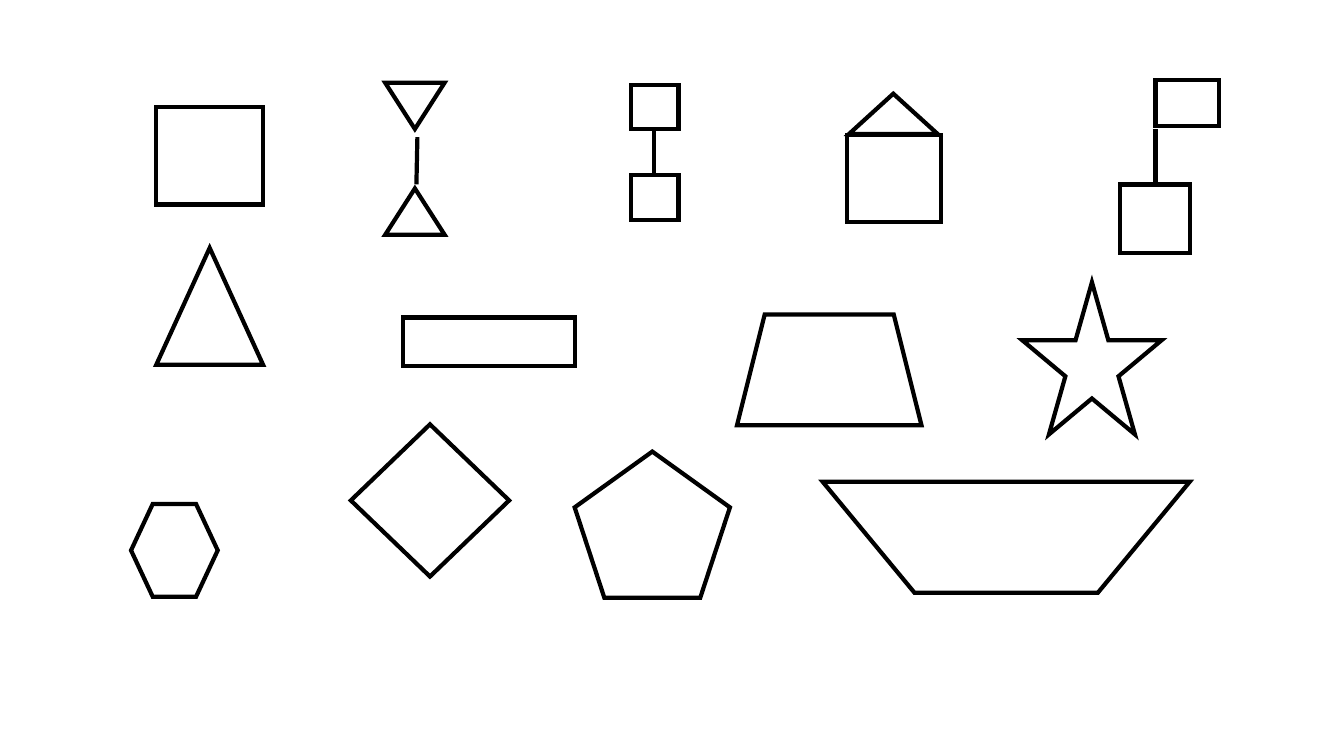
"""Build a slide of outlined geometric shapes and simple figures made from them."""
from dataclasses import dataclass

from lxml import etree
from pptx import Presentation
from pptx.dml.color import RGBColor
from pptx.enum.shapes import MSO_CONNECTOR, MSO_SHAPE as SHAPE
from pptx.oxml.ns import qn
from pptx.util import Emu, Pt

PX = 9144


@dataclass(frozen=True)
class Theme:
    paper: RGBColor = RGBColor(255, 255, 255)
    ink: RGBColor = RGBColor(0, 0, 0)
    stroke: Pt = Pt(3)


theme = Theme()


def px(*lengths):
    return [Emu(length * PX) for length in lengths]


def outline(line):
    line.color.rgb = theme.ink
    line.width = theme.stroke
    properties = line._get_or_add_ln()
    etree.SubElement(properties, qn("a:miter"), lim="800000")


presentation = Presentation()
presentation.slide_width, presentation.slide_height = px(1333, 750)
slide = presentation.slides.add_slide(presentation.slide_layouts[6])
shapes = slide.shapes

single_figures = [
    (SHAPE.ISOSCELES_TRIANGLE, 155, 246, 106, 116),
    (SHAPE.RECTANGLE, 155, 106, 106, 97),
    (SHAPE.DIAMOND, 348, 421, 157, 151),
    (SHAPE.RECTANGLE, 400, 315, 170, 48),
    (SHAPE.HEXAGON, 130, 500, 86, 92),
    (SHAPE.REGULAR_PENTAGON, 570, 448, 154, 145),
    (SHAPE.STAR_5_POINT, 1014, 280, 138, 151),
    (SHAPE.TRAPEZOID, 731, 312, 183, 110),
]
house = [
    (SHAPE.RECTANGLE, 840, 134, 93, 86),
    (SHAPE.ISOSCELES_TRIANGLE, 842, 93, 88, 40),
]
linked_squares = [(SHAPE.RECTANGLE, 626, top, 47, 44) for top in (84, 174)]
hourglass = [(SHAPE.ISOSCELES_TRIANGLE, 382, top, 59, 46) for top in (82, 187)]
flag = [
    (SHAPE.RECTANGLE, 1146, 79, 63, 46),
    (SHAPE.RECTANGLE, 1111, 183, 69, 68),
]

drawn = []
for kind, *box in single_figures + house + linked_squares + flag + hourglass:
    drawn.append(shapes.add_shape(kind, *px(*box)))
upper_triangle = drawn[-2]
upper_triangle.rotation = 180

bowl_builder = shapes.build_freeform(816, 478, scale=float(PX))
bowl_builder.add_line_segments([(907, 588), (1089, 588), (1180, 478)], close=True)
drawn.append(bowl_builder.convert_to_shape())

for shape in drawn:
    shape.shadow.inherit = False
    shape.fill.solid()
    shape.fill.fore_color.rgb = theme.paper
    outline(shape.line)

stems = [
    (649, 128, 649, 172),
    (414, 136, 413, 183),
    (1146, 128, 1146, 183),
]
for ends in stems:
    stem = shapes.add_connector(MSO_CONNECTOR.STRAIGHT, *px(*ends))
    outline(stem.line)
    etree.SubElement(stem._element.spPr, qn("a:effectLst"))

presentation.save("out.pptx")
